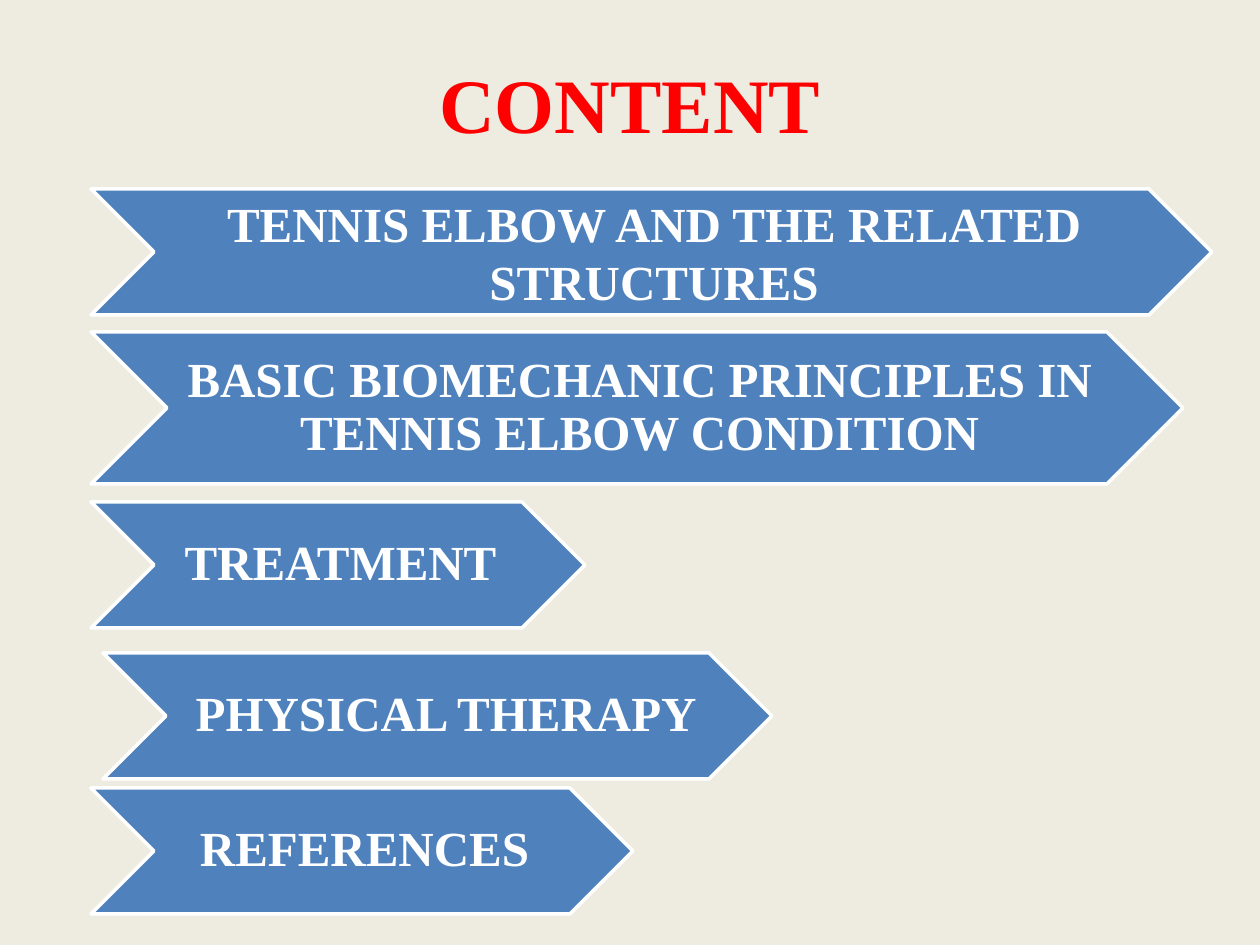
from pptx import Presentation
from pptx.dml.color import RGBColor
from pptx.enum.shapes import MSO_SHAPE as Shape
from pptx.enum.text import MSO_ANCHOR as Anchor, PP_ALIGN as Align
from pptx.util import Emu, Pt

PX = 914400 // 126


def color(hex_value):
    return RGBColor.from_string(hex_value)


def add_text(box, text, size, hex_value, line_spacing=1.0, insets=(13, 6, 13, 6)):
    left, top, width, height = (Emu(n * PX) for n in box)
    frame = slide.shapes.add_textbox(left, top, width, height).text_frame
    frame.word_wrap = True
    frame.vertical_anchor = Anchor.MIDDLE
    (frame.margin_left, frame.margin_top,
     frame.margin_right, frame.margin_bottom) = (Emu(n * PX) for n in insets)
    paragraph = frame.paragraphs[0]
    paragraph.text = text
    paragraph.alignment = Align.CENTER
    paragraph.line_spacing = line_spacing
    paragraph.font.name = "Times New Roman"
    paragraph.font.size = Pt(size)
    paragraph.font.bold = True
    paragraph.font.color.rgb = color(hex_value)


deck = Presentation()
deck.slide_width, deck.slide_height = Emu(1260 * PX), Emu(945 * PX)
slide = deck.slides.add_slide(deck.slide_layouts[6])
slide.background.fill.solid()
slide.background.fill.fore_color.rgb = color("EEECE1")

# Title
add_text((63, 38, 1134, 130), "CONTENT", 44, "FF0000")

# Topics: left, top, width, height, line spacing, wording
topics = [
    (91, 189, 1121, 126, 1.0, "TENNIS ELBOW AND THE RELATED STRUCTURES"),
    (91, 332, 1092, 152, 0.9, "BASIC BIOMECHANIC PRINCIPLES IN TENNIS ELBOW CONDITION"),
    (91, 502, 494, 126, 0.9, "TREATMENT"),
    (103, 653, 669, 126, 0.9, " PHYSICAL THERAPY"),
    (91, 788, 542, 126, 0.9, "REFERENCES"),
]
for left, top, width, height, line_spacing, topic in topics:
    chevron = slide.shapes.add_shape(
        Shape.CHEVRON, Emu(left * PX), Emu(top * PX), Emu(width * PX), Emu(height * PX))
    chevron.shadow.inherit = False
    chevron.fill.solid()
    chevron.fill.fore_color.rgb = color("4F81BD")
    chevron.line.color.rgb = color("FFFFFF")
    chevron.line.width = Pt(2)

    # The label spans the body between the notch and the point
    label_box = (left + height // 2, top, width - height, height)
    add_text(label_box, topic, 28, "FFFFFF", line_spacing, insets=(5, 2, 0, 2))

deck.save("out.pptx")
